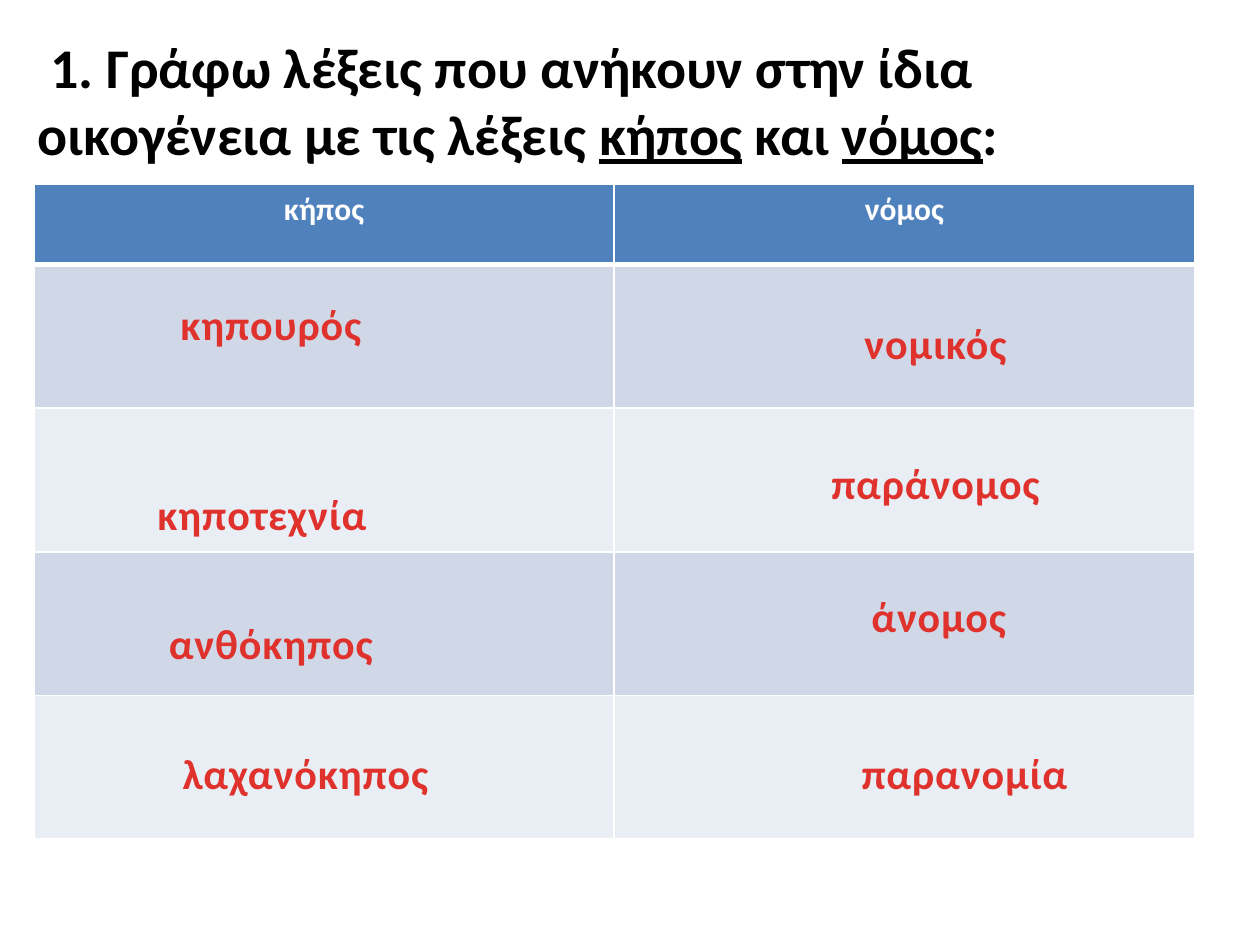
from pptx import Presentation
from pptx import util as u
from pptx.dml.color import RGBColor
from pptx.enum import text
from pptx.oxml import parse_xml
from pptx.oxml.ns import nsdecls

THEME = {
    "font": "Calibri",
    "ink": "000000",
    "white": "FFFFFF",
    "answer": "E0322D",
    "header": "4F81BD",
    "bands": ("D0D8E8", "E9EDF4"),
    "title_size": 32,
    "header_size": 18,
    "answer_size": 24,
}

TITLE = [
    (" 1. Γράφω λέξεις που ανήκουν στην ίδια οικογένεια με τις λέξεις ", False),
    ("κήπος", True),
    (" και ", False),
    ("νόμος", True),
    (":", False),
]
HEADERS = ("κήπος", "νόμος")
ANSWERS = [
    ("κηπουρός", 1.32, 2.32, 1.66),
    ("κηποτεχνία", 1.14, 3.83, 1.88),
    ("ανθόκηπος", 1.23, 4.85, 1.84),
    ("λαχανόκηπος", 1.34, 5.88, 2.17),
    ("νομικός", 6.75, 2.47, 1.35),
    ("παράνομος", 6.49, 3.58, 1.87),
    ("άνομος", 6.81, 4.64, 1.28),
    ("παρανομία", 6.73, 5.88, 1.85),
]
TABLE_LEFT, TABLE_TOP, TABLE_WIDTH = 0.27, 1.46, 9.21
ROW_HEIGHTS = (0.64, 1.14, 1.14, 1.14, 1.14)
ANSWER_HEIGHT = 0.5


def add_span(para, words, size, color, underline=False):
    span = para.add_run()
    span.text = words
    span.font.name = THEME["font"]
    span.font.size = u.Pt(size)
    span.font.bold = True
    span.font.underline = underline
    span.font.color.rgb = RGBColor.from_string(color)
    return span


def add_box(page, left, top, width, height, wrap):
    box = page.shapes.add_textbox(*map(u.Inches, (left, top, width, height)))
    box.text_frame.word_wrap = wrap
    return box


def add_title(page):
    box = add_box(page, 0.2, 0.21, 9.21, 7.09, True)
    para = box.text_frame.paragraphs[0]
    for words, underline in TITLE:
        add_span(para, words, THEME["title_size"], THEME["ink"], underline)


def style_cell(cell, fill, bottom):
    cell.fill.solid()
    cell.fill.fore_color.rgb = RGBColor.from_string(fill)
    properties = cell._tc.get_or_add_tcPr()
    for index, (side, points) in enumerate((("L", 1), ("R", 1), ("T", 1), ("B", bottom))):
        properties.insert(index, parse_xml(
            f'<a:ln{side} {nsdecls("a")} w="{u.Pt(points)}"><a:solidFill>'
            f'<a:srgbClr val="{THEME["white"]}"/></a:solidFill></a:ln{side}>'))


def add_word_table(page):
    frame = page.shapes.add_table(
        len(ROW_HEIGHTS), len(HEADERS), u.Inches(TABLE_LEFT), u.Inches(TABLE_TOP),
        u.Inches(TABLE_WIDTH), u.Inches(sum(ROW_HEIGHTS)))
    table = frame.table
    for row_index, height in enumerate(ROW_HEIGHTS):
        row = table.rows[row_index]
        row.height = u.Inches(height)
        is_header = row_index == 0
        fill = THEME["header"] if is_header else THEME["bands"][(row_index - 1) % 2]
        for cell in row.cells:
            style_cell(cell, fill, 3 if is_header else 1)
    for cell, words in zip(table.rows[0].cells, HEADERS):
        para = cell.text_frame.paragraphs[0]
        para.alignment = text.PP_ALIGN.CENTER
        add_span(para, words, THEME["header_size"], THEME["white"])


def add_answer(page, words, left, top, width):
    box = add_box(page, left, top, width, ANSWER_HEIGHT, False)
    box.text_frame.auto_size = text.MSO_AUTO_SIZE.SHAPE_TO_FIT_TEXT
    para = box.text_frame.paragraphs[0]
    para.alignment = text.PP_ALIGN.CENTER
    span = add_span(para, words, THEME["answer_size"], THEME["answer"])
    span.font._element.set("spc", "50")


def main():
    deck = Presentation()
    deck.slide_width, deck.slide_height = u.Inches(10), u.Inches(7.5)
    page = deck.slides.add_slide(deck.slide_layouts[6])
    add_title(page)
    add_word_table(page)
    for answer in ANSWERS:
        add_answer(page, *answer)
    deck.save("out.pptx")


if __name__ == "__main__":
    main()
